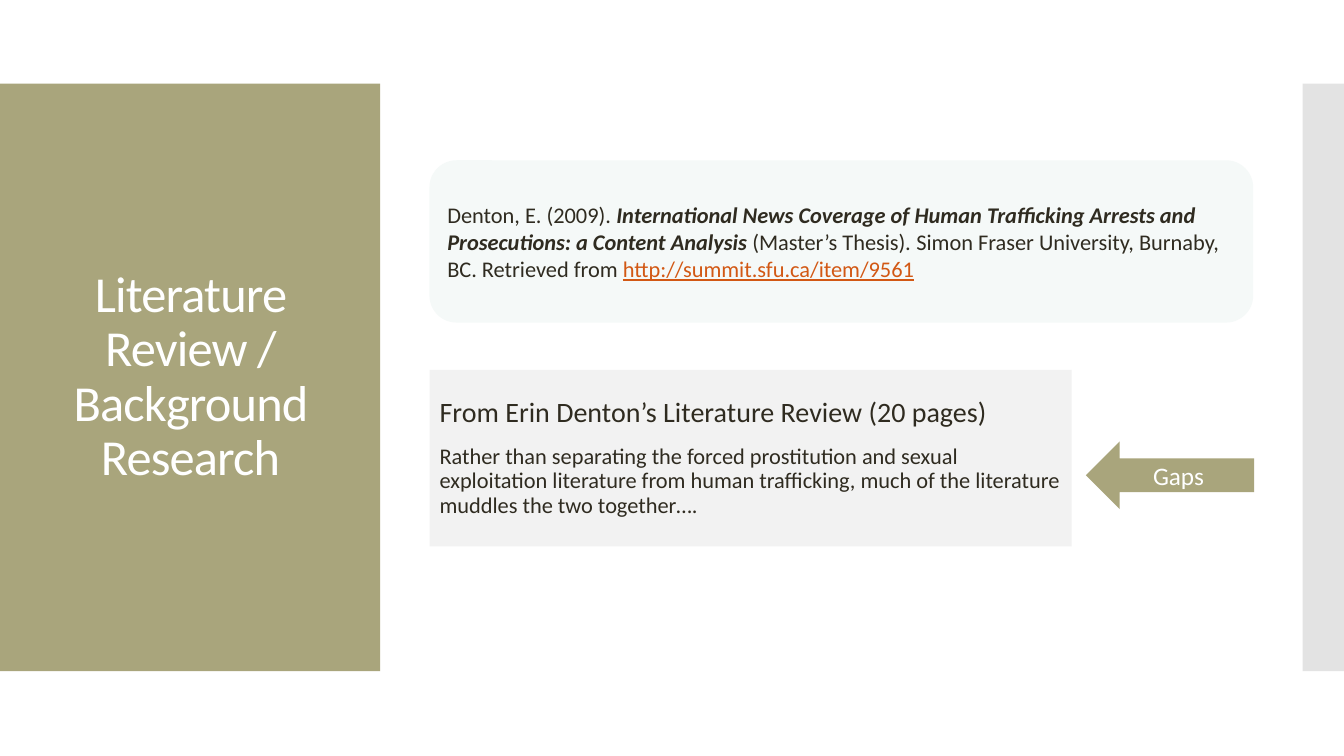
from pptx import Presentation
from pptx.dml.color import RGBColor
from pptx.enum import shapes, text
from pptx.oxml import ns, xmlchemy
from pptx.util import Inches, Pt

OLIVE, GRAY, PALE, MIST = "A9A57C", "C8C8C8", "F2F2F2", "F5F9F8"
INK, WHITE, LINK = "2F2B20", "FFFFFF", "D25814"
BAND_TOP, BAND_HEIGHT = 0.83, 5.83
CONTENT_LEFT = 4.26


def paint(color_holder, color):
    """Give a fill a solid colour."""
    color_holder.solid()
    color_holder.fore_color.rgb = RGBColor.from_string(color)


def place(sp, left, top, width, height):
    box = dict(left=left, top=top, width=width, height=height)
    for name, value in box.items():
        setattr(sp, name, Inches(value))


def add_block(slide, kind, box, color, alpha=None):
    """Add a filled preset shape without outline or shadow."""
    sp = slide.shapes.add_shape(kind, *map(Inches, box))
    sp.shadow.inherit = False
    paint(sp.fill, color)
    sp.line.fill.background()
    if alpha is not None:
        clr = sp._element.spPr.find(".//" + ns.qn("a:srgbClr"))
        xmlchemy.OxmlElement("a:alpha")
        node = xmlchemy.OxmlElement("a:alpha")
        node.set("val", str(alpha * 1000))
        clr.append(node)
    return sp


def setup_frame(sp):
    tf = sp.text_frame
    frame_format = dict(word_wrap=True, auto_size=text.MSO_AUTO_SIZE.NONE,
                        vertical_anchor=text.MSO_ANCHOR.MIDDLE)
    for name, value in frame_format.items():
        setattr(tf, name, value)
    return tf


def add_run(p, words, size, color=INK, **font_format):
    r = p.add_run()
    r.text = words
    font_format.update(name="Calibri", size=Pt(size))
    for name, value in font_format.items():
        setattr(r.font, name, value)
    r.font.color.rgb = RGBColor.from_string(color)
    return r


def fill_title(sp):
    place(sp, 0.28, 1.23, 3.22, 5.03)
    p = setup_frame(sp).paragraphs[0]
    p.alignment = text.PP_ALIGN.CENTER
    p.line_spacing = 0.9
    r = add_run(p, "Literature Review / Background Research", 36, WHITE)
    r._r.get_or_add_rPr().set("spc", "-60")


def fill_body(sp, lines):
    place(sp, CONTENT_LEFT, 3.67, 6.37, 1.75)
    paint(sp.fill, PALE)
    tf = setup_frame(sp)
    for i, (words, size) in enumerate(lines):
        p = tf.add_paragraph() if i else tf.paragraphs[0]
        p.line_spacing, p.space_before = 0.9, Pt(12)
        pPr = p._p.get_or_add_pPr()
        pPr.set("marL", "0")
        pPr.set("indent", "0")
        pPr.append(xmlchemy.OxmlElement("a:buNone"))
        add_run(p, words, size)


def add_citation(slide, parts):
    sp = add_block(slide, shapes.MSO_SHAPE.ROUNDED_RECTANGLE,
                   (CONTENT_LEFT, 1.59, 8.17, 1.61), MIST)
    p = setup_frame(sp).paragraphs[0]
    p.alignment = text.PP_ALIGN.LEFT
    for words, font_format in parts:
        add_run(p, words, 16, **font_format)


def add_arrow(slide, label):
    sp = add_block(slide, shapes.MSO_SHAPE.LEFT_ARROW,
                   (10.77, 4.38, 1.67, 0.67), OLIVE)
    p = setup_frame(sp).paragraphs[0]
    p.alignment = text.PP_ALIGN.CENTER
    add_run(p, label, 18, WHITE)


def main():
    prs = Presentation()
    prs.slide_width, prs.slide_height = Inches(13.33), Inches(7.5)
    slide = prs.slides.add_slide(prs.slide_layouts[1])
    title, body = slide.placeholders

    # Side bands, behind the placeholders
    for left, width, color, alpha in ((0, 3.77, OLIVE, None),
                                      (12.92, 0.41, GRAY, 50)):
        add_block(slide, shapes.MSO_SHAPE.RECTANGLE,
                  (left, BAND_TOP, width, BAND_HEIGHT), color, alpha)
    for sp in (title, body):
        slide.shapes._spTree.append(sp._element)

    # Title and review excerpt
    fill_title(title)
    fill_body(body, [
        ("From Erin Denton’s Literature Review (20 pages)", 20),
        ("Rather than separating the forced prostitution and sexual "
         "exploitation literature from human trafficking, much of the "
         "literature muddles the two together….", 16),
    ])

    # Cited thesis
    add_citation(slide, [
        ("Denton, E. (2009). ", {}),
        ("International News Coverage of Human Trafficking Arrests and "
         "Prosecutions: a Content Analysis ", dict(bold=True, italic=True)),
        ("(Master’s Thesis)", {}),
        (".", dict(italic=True)),
        (" Simon Fraser University, Burnaby, BC. Retrieved from ", {}),
        ("http://summit.sfu.ca/item/9561", dict(color=LINK, underline=True)),
    ])

    # Pointer to the excerpt
    add_arrow(slide, "Gaps")
    prs.save("out.pptx")


if __name__ == "__main__":
    main()
